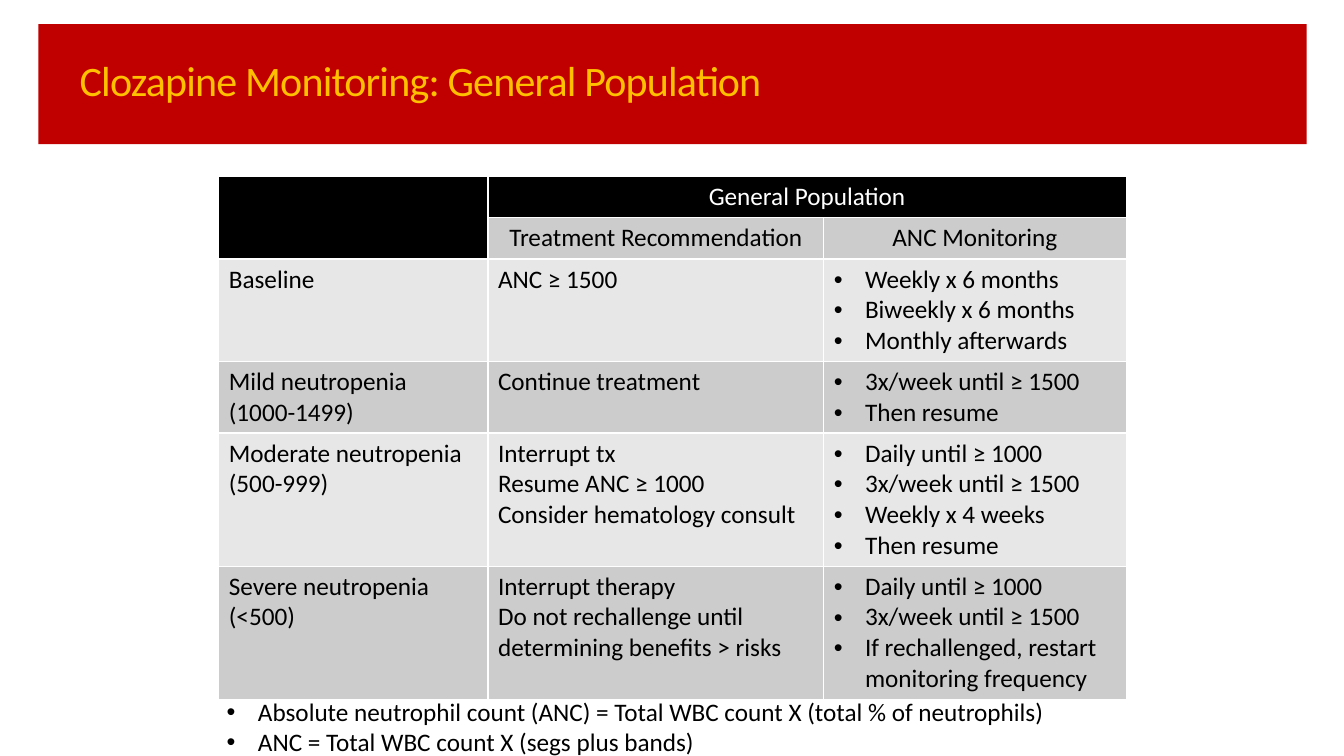
"""Build the slide on clozapine monitoring in the general population."""
from dataclasses import dataclass

from lxml import etree
from pptx import Presentation
from pptx.dml.color import RGBColor
from pptx.enum.shapes import MSO_SHAPE
from pptx.enum.text import MSO_ANCHOR, MSO_AUTO_SIZE, PP_ALIGN
from pptx.oxml.ns import qn
from pptx.util import Pt

RECTANGLE = MSO_SHAPE.RECTANGLE
MIDDLE = MSO_ANCHOR.MIDDLE
FIT_SHAPE = MSO_AUTO_SIZE.SHAPE_TO_FIT_TEXT
LEFT, CENTER = PP_ALIGN.LEFT, PP_ALIGN.CENTER

TITLE = "Clozapine Monitoring: General Population"
POPULATION = "General Population"
SUBHEADS = ["Treatment Recommendation", "ANC Monitoring"]
STAGES = [
    (["Baseline"],
     ["ANC ≥ 1500"],
     ["Weekly x 6 months", "Biweekly x 6 months", "Monthly afterwards"]),
    (["Mild neutropenia", "(1000-1499)"],
     ["Continue treatment"],
     ["3x/week until ≥ 1500", "Then resume"]),
    (["Moderate neutropenia", "(500-999)"],
     ["Interrupt tx", "Resume ANC ≥ 1000", "Consider hematology consult"],
     ["Daily until ≥ 1000", "3x/week until ≥ 1500", "Weekly x 4 weeks", "Then resume"]),
    (["Severe neutropenia", "(<500)"],
     ["Interrupt therapy", "Do not rechallenge until determining benefits > risks"],
     ["Daily until ≥ 1000", "3x/week until ≥ 1500",
      "If rechallenged, restart monitoring frequency"]),
]
FORMULAS = [
    "Absolute neutrophil count (ANC) = Total WBC count X (total % of neutrophils)",
    "ANC = Total WBC count X (segs plus bands)",
]

SLIDE_SIZE = (1333, 750)
BANNER_BOX = (38, 24, 1258, 119)
TITLE_BOX = (69, 33, 1154, 99)
TABLE_ORIGIN = (217, 175)
FORMULA_BOX = (215, 686, 861, 71)
COLUMN_WIDTHS = [267, 333, 300]
HEADER_HEIGHT = 41
LINE_HEIGHT, CELL_PADDING = 30, 11
BULLET_INDENT = 31


@dataclass(frozen=True)
class Theme:
    """Colours, font and type sizes of the slide."""
    font: str = "Calibri"
    title_size: int = 30
    body_size: int = 18
    banner: RGBColor = RGBColor(0xC0, 0x00, 0x00)
    title: RGBColor = RGBColor(0xFF, 0xC0, 0x00)
    black: RGBColor = RGBColor(0x00, 0x00, 0x00)
    white: RGBColor = RGBColor(0xFF, 0xFF, 0xFF)
    dark_band: RGBColor = RGBColor(0xCC, 0xCC, 0xCC)
    light_band: RGBColor = RGBColor(0xE7, 0xE7, 0xE7)


THEME = Theme()


def px(length):
    """Turn px into EMU at 100 px to the inch."""
    return length * 9144


def place(box):
    """Turn a px box into EMU."""
    return [px(length) for length in box]


def write(frame, lines, size=THEME.body_size, color=THEME.black, align=LEFT,
          bullets=False, line_spacing=None, tracking=None):
    """Write one paragraph per line in the given format."""
    for index, line in enumerate(lines):
        paragraph = frame.paragraphs[0] if index == 0 else frame.add_paragraph()
        paragraph.alignment = align
        paragraph.line_spacing = line_spacing
        if bullets:
            properties = paragraph._p.get_or_add_pPr()
            properties.set("marL", str(px(BULLET_INDENT)))
            properties.set("indent", str(-px(BULLET_INDENT)))
            etree.SubElement(properties, qn("a:buFont"), typeface="Arial")
            etree.SubElement(properties, qn("a:buChar"), char="•")
        run = paragraph.add_run()
        run.text = line
        run.font.name = THEME.font
        run.font.size = Pt(size)
        run.font.bold = False
        run.font.color.rgb = color
        if tracking is not None:
            run._r.get_or_add_rPr().set("spc", str(tracking))


def paint(cell, color):
    """Fill a table cell."""
    cell.fill.solid()
    cell.fill.fore_color.rgb = color


def add_heading(slide):
    """Set the title on its red banner."""
    banner = slide.shapes.add_shape(RECTANGLE, *place(BANNER_BOX))
    banner.shadow.inherit = False
    banner.fill.solid()
    banner.fill.fore_color.rgb = THEME.banner
    banner.line.fill.background()
    slide.shapes._spTree.insert(2, banner._element)

    title = slide.shapes.title
    title.left, title.top, title.width, title.height = place(TITLE_BOX)
    title.text_frame.vertical_anchor = MIDDLE
    write(title.text_frame, [TITLE], size=THEME.title_size, color=THEME.title,
          line_spacing=0.9, tracking=-60)


def add_monitoring_table(slide):
    """Add the table of stages, treatment and monitoring."""
    stage_heights = [CELL_PADDING + LINE_HEIGHT * max(map(len, stage)) for stage in STAGES]
    row_heights = [HEADER_HEIGHT] * 2 + stage_heights
    box = (*TABLE_ORIGIN, sum(COLUMN_WIDTHS), sum(row_heights))
    table = slide.shapes.add_table(len(row_heights), len(COLUMN_WIDTHS), *place(box)).table
    for column, width in zip(table.columns, COLUMN_WIDTHS):
        column.width = px(width)
    for row, height in zip(table.rows, row_heights):
        row.height = px(height)

    for cell in [*table.rows[0].cells, table.cell(1, 0)]:
        paint(cell, THEME.black)
    table.cell(0, 0).merge(table.cell(1, 0))
    table.cell(0, 1).merge(table.cell(0, 2))
    write(table.cell(0, 1).text_frame, [POPULATION], color=THEME.white, align=CENTER)
    for column, subhead in enumerate(SUBHEADS, start=1):
        paint(table.cell(1, column), THEME.dark_band)
        write(table.cell(1, column).text_frame, [subhead], align=CENTER)

    for row, stage in enumerate(STAGES, start=2):
        band = THEME.dark_band if row % 2 else THEME.light_band
        for column, lines in enumerate(stage):
            paint(table.cell(row, column), band)
            write(table.cell(row, column).text_frame, lines, bullets=column == 2)


def add_formulas(slide):
    """Add the ANC formulas under the table."""
    formulas = slide.shapes.add_textbox(*place(FORMULA_BOX)).text_frame
    formulas.word_wrap = False
    formulas.auto_size = FIT_SHAPE
    write(formulas, FORMULAS, bullets=True)


def main():
    """Build and save the slide."""
    deck = Presentation()
    deck.slide_width, deck.slide_height = place(SLIDE_SIZE)
    slide = deck.slides.add_slide(deck.slide_layouts[5])
    add_heading(slide)
    add_monitoring_table(slide)
    add_formulas(slide)
    deck.save("out.pptx")


if __name__ == "__main__":
    main()
